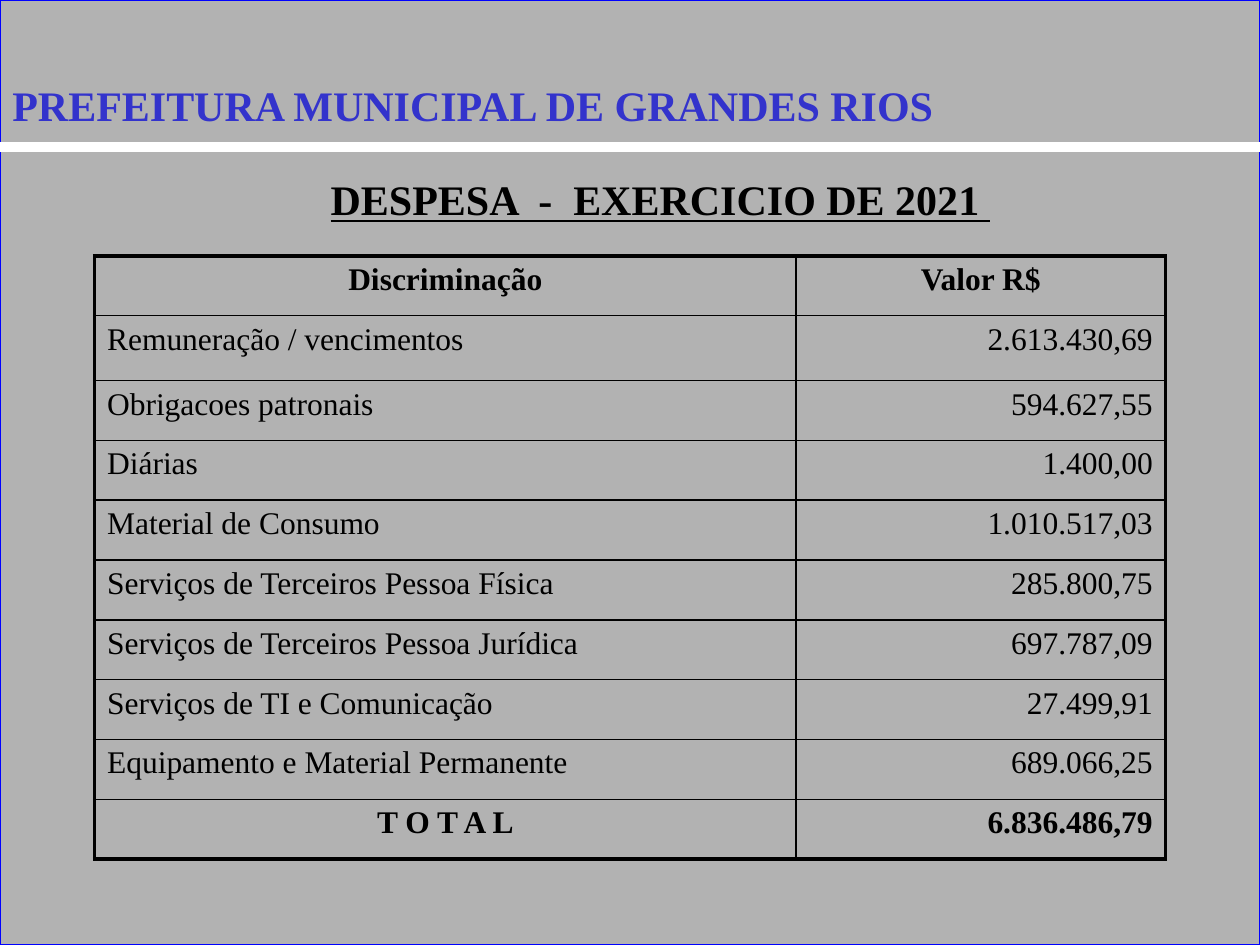
from lxml.etree import SubElement
from pptx import Presentation
from pptx.dml.color import RGBColor
from pptx.enum.shapes import MSO_CONNECTOR as CONN, MSO_SHAPE as SHAPE
from pptx.enum.text import MSO_ANCHOR as ANCHOR, MSO_AUTO_SIZE as FIT, PP_ALIGN as AL
from pptx.oxml import parse_xml
from pptx.oxml.ns import nsdecls, qn
from pptx.util import Pt

ROWS = [
    ("Discriminação", "Valor R$"),
    ("Remuneração / vencimentos", "2.613.430,69"),
    ("Obrigacoes patronais", "594.627,55"),
    ("Diárias", "1.400,00"),
    ("Material de Consumo", "1.010.517,03"),
    ("Serviços de Terceiros Pessoa Física", "285.800,75"),
    ("Serviços de Terceiros Pessoa Jurídica", "697.787,09"),
    ("Serviços de TI e Comunicação", "27.499,91"),
    ("Equipamento e Material Permanente", "689.066,25"),
    ("T O T A L", "6.836.486,79"),
]


def color(value):
    return RGBColor.from_string(value)


class Deck:
    """Holds the text style and current slide, and draws each kind of element."""

    font = "Times New Roman"
    ink = "000000"

    def __init__(self, width, height):
        self.prs = Presentation()
        self.prs.slide_width, self.prs.slide_height = Pt(width), Pt(height)
        self.s = self.prs.slides.add_slide(self.prs.slide_layouts[5])

    def add_text(self, tf, text, align=AL.LEFT, ink=None, **fmt):
        p = tf.paragraphs[0]
        p.alignment = align
        r = p.add_run()
        r.text = text
        for name, value in {"name": self.font, **fmt}.items():
            setattr(r.font, name, value)
        r.font.color.rgb = color(ink or self.ink)
        return r

    def frame(self, sp):
        tf = sp.text_frame
        for name, value in {"word_wrap": True, "auto_size": FIT.NONE,
                            "vertical_anchor": ANCHOR.TOP}.items():
            setattr(tf, name, value)
        return tf

    def backdrop(self, width, height, fill, line):
        sp = self.s.shapes.add_shape(SHAPE.RECTANGLE, 0, 0, Pt(width), Pt(height))
        sp.shadow.inherit = False
        sp.fill.solid()
        sp.fill.fore_color.rgb = color(fill)
        sp.line.color.rgb = color(line)
        sp.line.width = Pt(0.75)
        sp.element.getparent().insert(2, sp.element)

    def rule(self, x1, x2, y, line, width):
        c = self.s.shapes.add_connector(CONN.STRAIGHT, Pt(x1), Pt(y), Pt(x2), Pt(y))
        c.line.color.rgb = color(line)
        c.line.width = Pt(width)
        SubElement(c.element.spPr, qn("a:effectLst"))

    def title(self, box, text, **fmt):
        sp = self.s.shapes.title
        sp.left, sp.top, sp.width, sp.height = map(Pt, box)
        self.add_text(self.frame(sp), text, **fmt)

    def shadowed_text(self, box, text, **fmt):
        sp = self.s.shapes.add_textbox(*map(Pt, box))
        self.add_text(self.frame(sp), text, **fmt)
        fill = next(sp.element.iter(qn("a:solidFill")))
        fill.addnext(parse_xml(
            f'<a:effectLst {nsdecls("a")}><a:outerShdw dist="35921" dir="2700000">'
            '<a:srgbClr val="808080"/></a:outerShdw></a:effectLst>'))

    def borders(self, cell, widths):
        tc_pr = cell._tc.get_or_add_tcPr()
        for i, (side, width) in enumerate(widths.items()):
            tc_pr.insert(i, parse_xml(
                f'<a:ln{side} {nsdecls("a")} w="{Pt(width)}"><a:solidFill>'
                f'<a:srgbClr val="{self.ink}"/></a:solidFill></a:ln{side}>'))

    def table(self, left, top, widths, heights, rows, thick=2.25, thin=1):
        last_row, last_col = len(rows) - 1, len(widths) - 1
        box = map(Pt, (left, top, sum(widths), sum(heights)))
        t = self.s.shapes.add_table(len(rows), len(widths), *box).table
        t.first_row = t.horz_banding = False
        for col, width in zip(t.columns, widths):
            col.width = Pt(width)
        for i, (row, height) in enumerate(zip(rows, heights)):
            t.rows[i].height = Pt(height)
            for j, text in enumerate(row):
                cell = t.cell(i, j)
                cell.fill.background()
                outer = {"L": j == 0, "R": j == last_col, "T": i == 0, "B": i == last_row}
                self.borders(cell, {k: thick if v else thin for k, v in outer.items()})
                strong = i in (0, last_row)
                align = AL.RIGHT if j and i else AL.CENTER if strong else AL.LEFT
                self.add_text(cell.text_frame, text, align, size=Pt(18), bold=strong)


def main():
    deck = Deck(720, 540)
    deck.backdrop(720, 540, "B2B2B2", "0000FF")
    deck.rule(0, 720, 84, "FFFFFF", 6)
    heading = {"size": Pt(24), "bold": True}
    deck.title((99.4, 95.8, 555.8, 79.9), "DESPESA  -  EXERCICIO DE 2021 ",
               align=AL.CENTER, underline=True, **heading)
    deck.shadowed_text((0, 41.8, 592.6, 36), "PREFEITURA MUNICIPAL DE GRANDES RIOS",
                       ink="3333CC", **heading)
    heights = [34.2] * len(ROWS)
    heights[1] = 37.1
    deck.table(54, 146.2, (401, 211), heights, ROWS)
    deck.prs.save("out.pptx")


if __name__ == "__main__":
    main()
